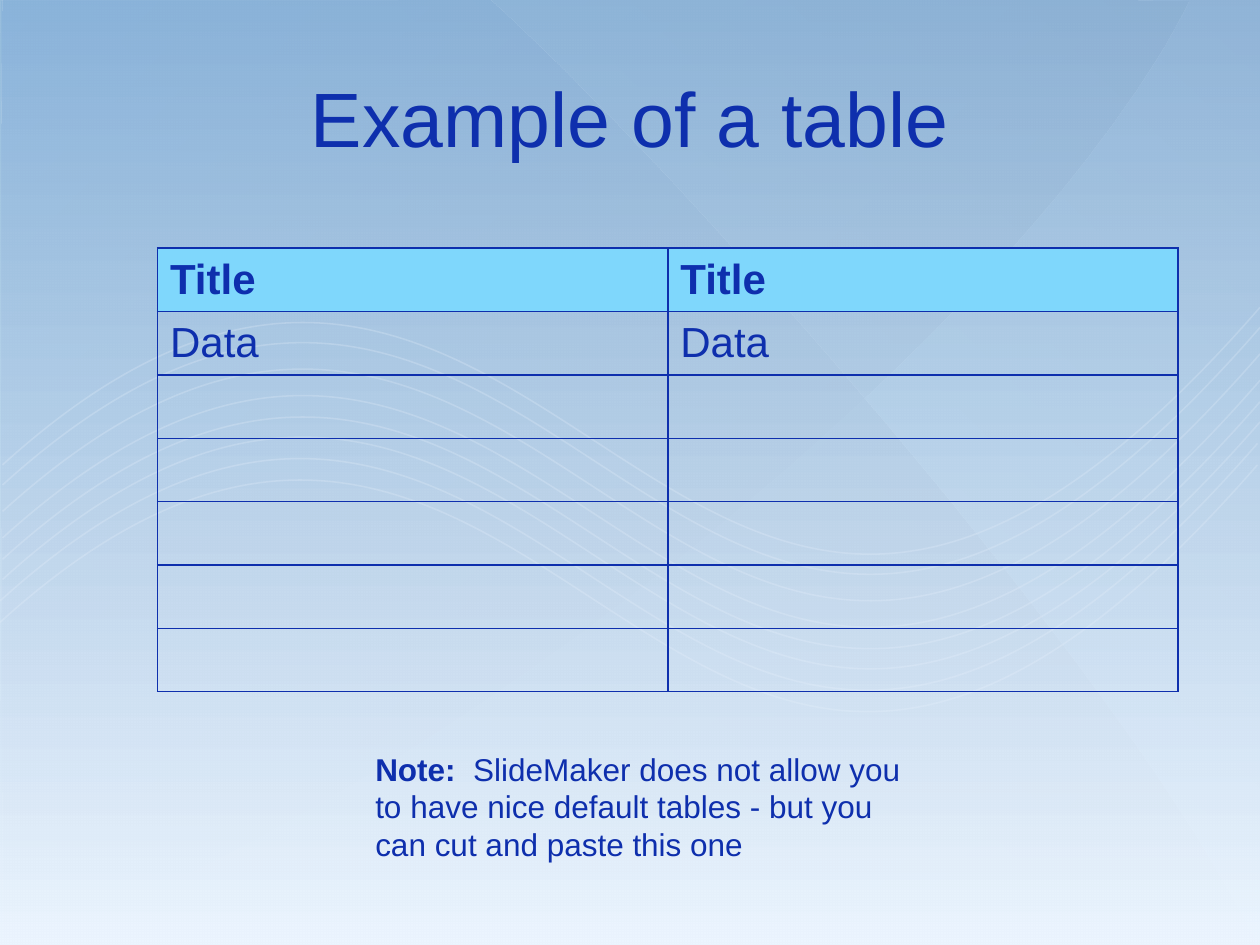
from lxml import etree
from pptx import Presentation, util as u
from pptx.dml.color import RGBColor
from pptx.enum import shapes, text
from pptx.oxml.ns import qn

Inches = u.Inches
NAVY = RGBColor(0x0E, 0x2F, 0xAD)
HEADER_BLUE = RGBColor(0x7F, 0xD7, 0xFC)
WHITE = RGBColor(0xFF, 0xFF, 0xFF)
TEAL = RGBColor(0x38, 0x9F, 0xC9)
MID_BLUE = RGBColor(0x21, 0x68, 0xA9)
RAY_BLUE = RGBColor(0x00, 0x60, 0xB6)
RAY_DARK = RGBColor(0x00, 0x37, 0x67)
HAZE_BLUE = RGBColor(0xB3, 0xCC, 0xE6)
HAZE_PALE = RGBColor(0xEC, 0xF5, 0xFF)

presentation = Presentation()
presentation.slide_width, presentation.slide_height = Inches(10), Inches(7.5)
slide = presentation.slides.add_slide(presentation.slide_layouts[6])


def add_curve(points, closed):
    """Draw a chain of cubic Bezier segments: a start, then three points each."""
    start, *others = [(Inches(x), Inches(y)) for x, y in points]
    builder = slide.shapes.build_freeform(*start)
    builder.add_line_segments(others, close=closed)
    shape = builder.convert_to_shape()
    shape.shadow.inherit = False
    # Turn every three straight segments into one Bezier segment
    segments = list(shape._element.spPr.iter(qn("a:lnTo")))
    for i in range(0, len(segments), 3):
        bezier = etree.Element(qn("a:cubicBezTo"))
        segments[i].addprevious(bezier)
        for segment in segments[i:i + 3]:
            bezier.append(segment[0])
            segment.getparent().remove(segment)
    return shape


def fill_gradient(shape, angle, *stops):
    """Fill with two (colour, opacity percent) stops and no outline."""
    shape.shadow.inherit = False
    shape.line.fill.background()
    shape.fill.gradient()
    shape.fill.gradient_angle = angle
    for stop, (color, _) in zip(shape.fill.gradient_stops, stops):
        stop.color.rgb = color
    colors = shape._element.spPr.iter(qn("a:srgbClr"))
    for element, (_, opacity) in zip(colors, stops):
        if opacity < 100:
            etree.SubElement(element, qn("a:alpha"), val=str(opacity * 1000))


# Background: base gradient and two translucent rays
full_slide = (shapes.MSO_SHAPE.RECTANGLE, 0, 0, Inches(10), Inches(7.5))
base = slide.shapes.add_shape(*full_slide)
fill_gradient(base, 45, (TEAL, 100), (MID_BLUE, 100))

wide_ray = add_curve([
    (9.43, 0.01), (8.2, 2.48), (3.57, 6.36), (0.01, 7.54),
    (0, 6.21), (0.03, 2.09), (0.01, 0.01),
    (1.87, 0.01), (7.91, 0), (9.43, 0.01)], True)
fill_gradient(wide_ray, 315, (RAY_BLUE, 41), (RAY_DARK, 47))

diagonal_ray = add_curve([
    (0.02, -0.01), (0.7, -0.01), (2.31, -0.04), (3.87, -0.02),
    (5.29, 1.25), (8.9, 5.29), (9.99, 7.52),
    (8.76, 7.53), (1.96, 7.51), (0.02, 7.51),
    (0.02, 5.48), (0, 1.64), (0.02, -0.01)], True)
fill_gradient(diagonal_ray, 315, (RAY_BLUE, 72), (RAY_DARK, 47))

# Background: one wave repeated down the slide
WAVE = [(0, 2.05), (2.26, 0), (3.65, 1.2), (5.01, 2.06),
        (6.38, 2.93), (7.69, 3.43), (9.98, 0.8)]
for index, top in enumerate((1.64, 1.8, 2.01, 2.22, 2.39, 2.55, 2.72, 2.89)):
    left = 0.02 if index < 6 else 0
    wave = add_curve([(x + left, y + top) for x, y in WAVE], False)
    wave.fill.background()
    wave.line.color.rgb = WHITE
    wave.line.width = u.Pt(0.88)
    for element in wave._element.spPr.iter(qn("a:srgbClr")):
        etree.SubElement(element, qn("a:alpha"), val="41000")

# Background: pale haze over everything
haze = slide.shapes.add_shape(*full_slide)
fill_gradient(haze, 270, (HAZE_BLUE, 77), (HAZE_PALE, 100))

# Table with a header row and thin borders
ROWS = [("Title", "Title"), ("Data", "Data")] + [("", "")] * 5
table = slide.shapes.add_table(
    len(ROWS), 2, Inches(1.25), Inches(1.97), Inches(8.1), Inches(3.52)).table
table.first_row = table.horz_banding = False
cell_paragraphs = []
for row_index, row in enumerate(ROWS):
    for column_index, label in enumerate(row):
        cell = table.cell(row_index, column_index)
        cell.vertical_anchor = text.MSO_ANCHOR.MIDDLE
        properties = cell._tc.get_or_add_tcPr()
        for side in ("a:lnL", "a:lnR", "a:lnT", "a:lnB"):
            border = etree.SubElement(properties, qn(side), w=str(u.Pt(1)))
            solid = etree.SubElement(border, qn("a:solidFill"))
            etree.SubElement(solid, qn("a:srgbClr"), val=str(NAVY))
        if row_index == 0:
            cell.fill.solid()
            cell.fill.fore_color.rgb = HEADER_BLUE
        else:
            cell.fill.background()
        if label:
            paragraph = cell.text_frame.paragraphs[0]
            cell_paragraphs.append((paragraph, [(label, row_index == 0)], 24))

# Title and note boxes
title = slide.shapes.add_textbox(Inches(0.5), Inches(0.3), Inches(9), Inches(1.25))
title.text_frame.vertical_anchor = text.MSO_ANCHOR.MIDDLE
title.text_frame.paragraphs[0].alignment = text.PP_ALIGN.CENTER
note = slide.shapes.add_textbox(Inches(2.88), Inches(5.9), Inches(4.49), Inches(1))
for box in (title, note):
    box.text_frame.word_wrap = True
NOTE_RUNS = [
    ("Note:  ", True),
    ("SlideMaker does not allow you to have nice default tables"
     " - but you can cut and paste this one", False)]

# Write and format all text
for paragraph, runs, size in cell_paragraphs + [
        (title.text_frame.paragraphs[0], [("Example of a table", False)], 44),
        (note.text_frame.paragraphs[0], NOTE_RUNS, 18)]:
    for words, bold in runs:
        run = paragraph.add_run()
        run.text = words
        run.font.color.rgb = NAVY
        for name, value in {"name": "Arial", "size": u.Pt(size), "bold": bold}.items():
            setattr(run.font, name, value)

presentation.save("out.pptx")
